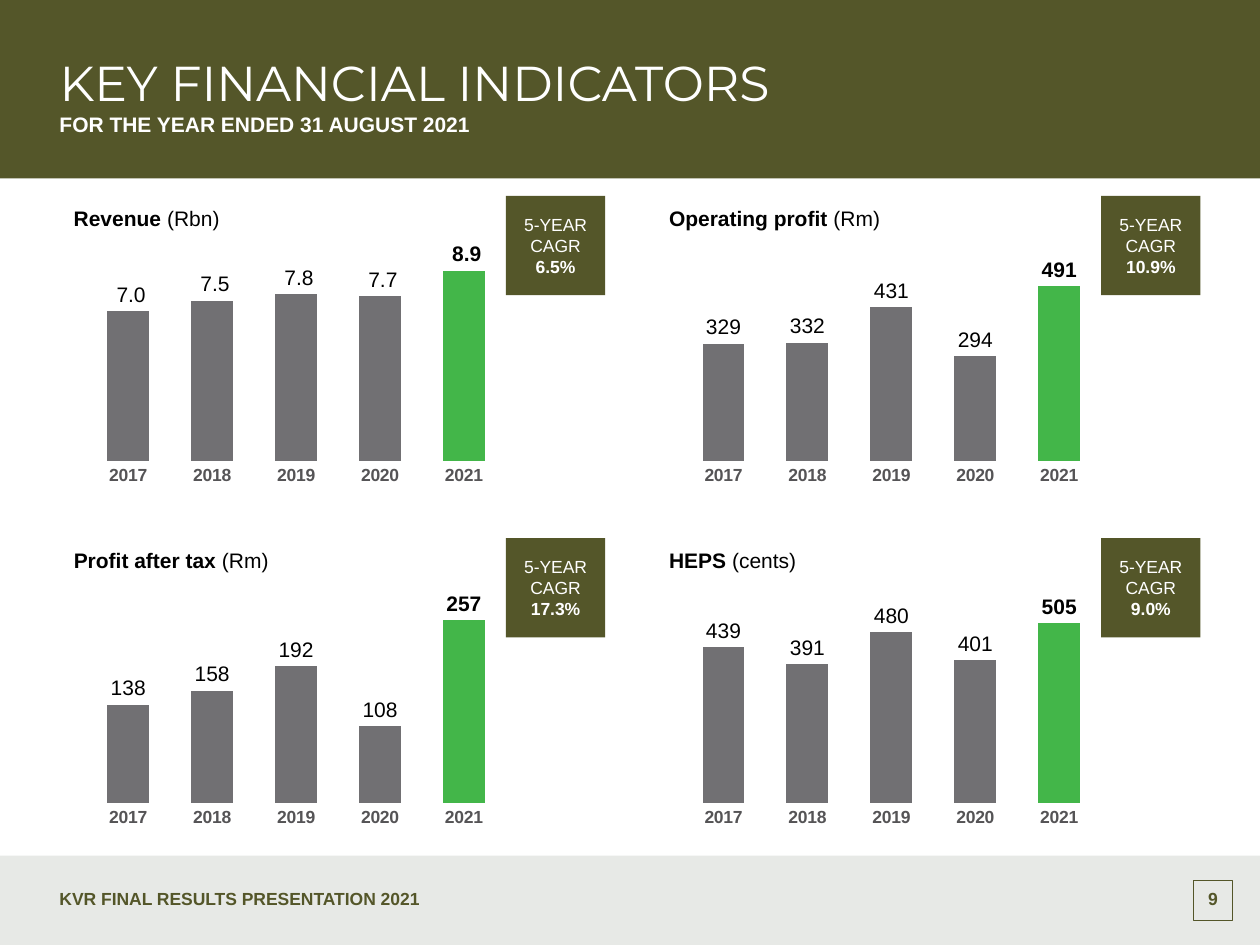
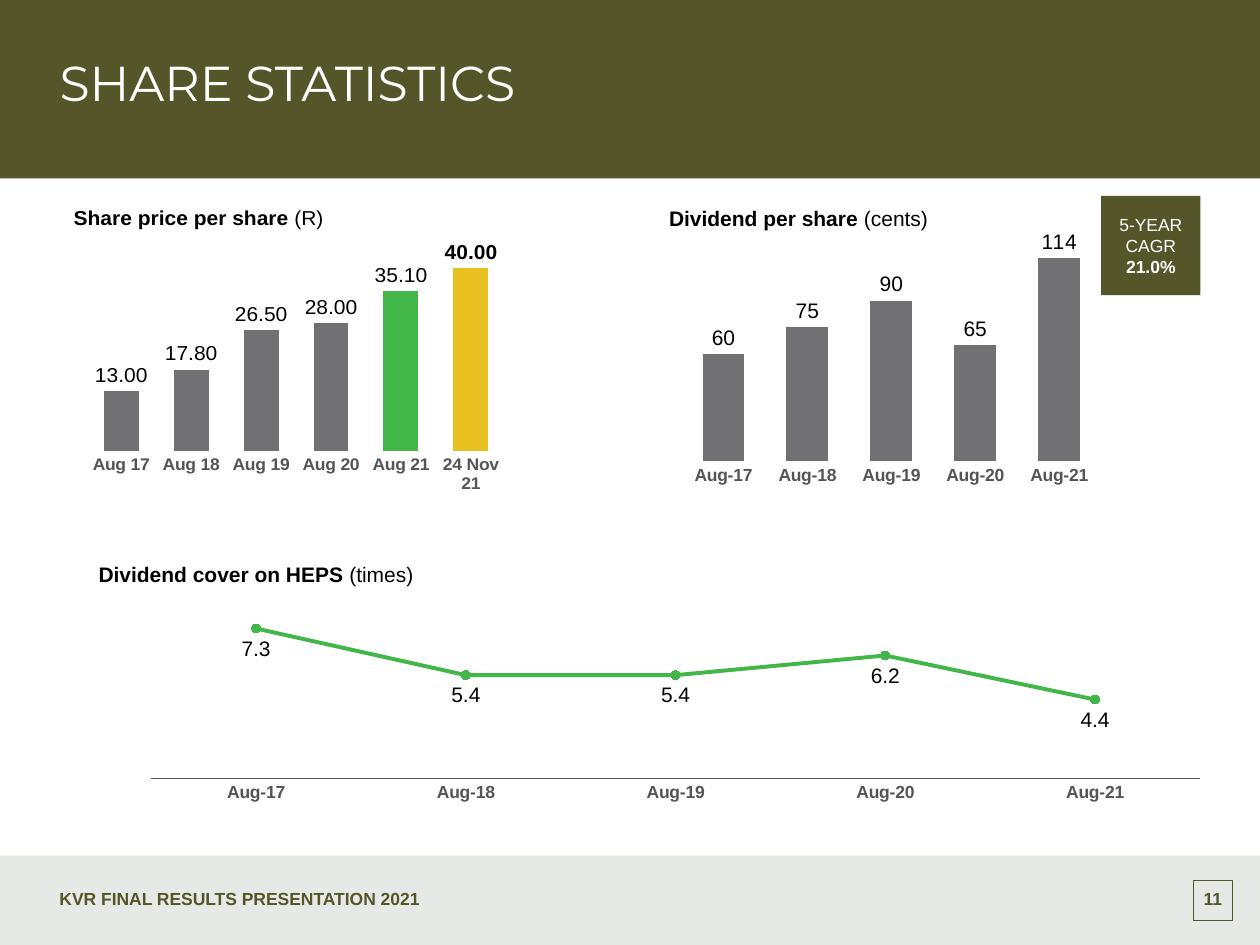
"""Build two slides of financial charts with a shared band, title and footer."""
from dataclasses import dataclass, field

from pptx import Presentation
from pptx.chart.chart import Chart
from pptx.chart.data import CategoryChartData
from pptx.dml.color import RGBColor
from pptx.enum.chart import XL_CHART_TYPE as ChartType
from pptx.enum.chart import XL_LABEL_POSITION as LabelPosition
from pptx.enum.chart import XL_MARKER_STYLE as MarkerStyle
from pptx.enum.chart import XL_TICK_MARK as TickMark
from pptx.enum.shapes import MSO_SHAPE as Preset
from pptx.enum.text import MSO_ANCHOR as Anchor
from pptx.enum.text import MSO_AUTO_SIZE as AutoSize
from pptx.enum.text import PP_ALIGN as Align
from pptx.oxml import parse_xml
from pptx.oxml.ns import nsdecls, qn
from pptx.util import Cm, Pt

COLOURS = {
    "olive": "545629",
    "pale": "E7E9E6",
    "white": "FFFFFF",
    "black": "000000",
    "axis": "555456",
    "grey": "717073",
    "green": "43B649",
    "gold": "E8C01F",
}
BODY_FONT = "Arial"
TITLE_FONT = "Montserrat"
FOOTER = "KVR FINAL RESULTS PRESENTATION 2021"
MARGIN = 1.2
TEXT_WIDTH = 23.0
COLUMN_STEP = 12.0
ROW_STEP = 6.9
CHARTS_TOP = 3.95
CHART_WIDTH = 9.0
CHART_HEIGHT = 6.0
BADGE_SIZE = 2.0
YEARS = ["2017", "2018", "2019", "2020", "2021"]
MONTHS = ["Aug-17", "Aug-18", "Aug-19", "Aug-20", "Aug-21"]


@dataclass
class Area:
    left: float
    top: float
    width: float
    height: float

    def lengths(self) -> list:
        return [Cm(side) for side in (self.left, self.top, self.width, self.height)]


@dataclass
class Indicator:
    name: str
    unit: str
    categories: list[str]
    values: list[float]
    maximum: float
    step: float
    column: int = 0
    row: int = 0
    number_format: str = "#,##0"
    growth: str = ""
    highlights: dict[int, str] = field(default_factory=lambda: {4: "green"})
    bold_label: int | None = 4


def colour(name: str) -> RGBColor:
    return RGBColor.from_string(COLOURS[name])


def style_font(font, size: float, tint: str, bold: bool = False, face: str = BODY_FONT) -> None:
    font.name, font.size, font.bold = face, Pt(size), bold
    font.color.rgb = colour(tint)


def add_span(para, text: str, size: float, tint: str, bold: bool = False, face: str = BODY_FONT) -> None:
    span = para.add_run()
    span.text = text
    style_font(span.font, size, tint, bold, face)


def prepare_frame(frame, anchor, margins: tuple[float, float] = (0, 0)):
    """Set wrapping, anchor and margins, and return the first paragraph."""
    frame.word_wrap = True
    frame.auto_size = AutoSize.NONE
    frame.vertical_anchor = anchor
    frame.margin_left = frame.margin_right = Cm(margins[0])
    frame.margin_top = frame.margin_bottom = Cm(margins[1])
    return frame.paragraphs[0]


def add_box(page, area: Area, fill: str = "", line: str = ""):
    box = page.shapes.add_shape(Preset.RECTANGLE, *area.lengths())
    box.shadow.inherit = False
    if fill:
        box.fill.solid()
        box.fill.fore_color.rgb = colour(fill)
    else:
        box.fill.background()
    if line:
        box.line.color.rgb = colour(line)
        box.line.width = Pt(0.5)
    else:
        box.line.fill.background()
    return box


def add_text(page, area: Area, text: str, size: float, tint: str, anchor) -> None:
    box = page.shapes.add_textbox(*area.lengths())
    para = prepare_frame(box.text_frame, anchor)
    para.line_spacing = 0.9
    add_span(para, text, size, tint, bold=True)


def add_page(deck, title: str, number: str, subtitle: str = ""):
    """Add a title-only slide with the shared bands, title and footer."""
    page = deck.slides.add_slide(deck.slide_layouts[5])
    add_box(page, Area(0, 17.25, 25.4, 1.8), "pale")
    add_box(page, Area(0, 0, 25.4, 3.6), "olive")

    heading = page.shapes.title
    page.shapes.element.append(heading.element)
    heading.left, heading.top, heading.width, heading.height = Area(MARGIN, 1.2, TEXT_WIDTH, 1.1).lengths()
    para = prepare_frame(heading.text_frame, Anchor.TOP)
    para.alignment, para.line_spacing = Align.LEFT, 0.9
    add_span(para, title, 28, "white", face=TITLE_FONT)
    if subtitle:
        add_text(page, Area(MARGIN, 2.3, TEXT_WIDTH, 0.6), subtitle, 12, "white", Anchor.TOP)

    add_text(page, Area(MARGIN, 17.75, 22.5, 0.8), FOOTER, 10, "olive", Anchor.MIDDLE)
    number_box = add_box(page, Area(24.05, 17.75, 0.8, 0.8), line="olive")
    para = prepare_frame(number_box.text_frame, Anchor.MIDDLE)
    para.alignment, para.line_spacing = Align.CENTER, 0.9
    add_span(para, number, 10, "olive", bold=True)
    return page


def place(parent, index: int, target: str = "", **sides: float) -> None:
    """Give a chart title or plot area a manual layout in chart fractions."""
    for old in parent.findall(qn("c:layout")):
        parent.remove(old)
    inner = f'<c:layoutTarget val="{target}"/>' if target else ""
    modes = "".join(f'<c:{side}Mode val="edge"/>' for side in "xy")
    values = "".join(f'<c:{side} val="{value}"/>' for side, value in sides.items())
    parent.insert(index, parse_xml(
        f'<c:layout {nsdecls("c")}><c:manualLayout>{inner}{modes}{values}</c:manualLayout></c:layout>'))


def add_chart(page, item: Indicator, kind, area: Area, label_position) -> Chart:
    """Add a one-series chart with its title, axes and value labels."""
    data = CategoryChartData(number_format=item.number_format)
    data.categories = item.categories
    data.add_series("Series 1", item.values)
    chart = page.shapes.add_chart(kind, *area.lengths(), data).chart
    style_font(chart.font, 10, "olive")
    chart.has_legend = False

    chart.has_title = True
    para = chart.chart_title.text_frame.paragraphs[0]
    add_span(para, item.name, 12, "black", bold=True)
    add_span(para, f" ({item.unit})", 12, "black")
    place(chart.chart_title.element, 1, x=0.21 / area.width, y=0.02)

    values = chart.value_axis
    values.minimum_scale, values.maximum_scale, values.major_unit = 0, item.maximum, item.step
    values.has_major_gridlines = False
    values.visible = False
    categories = chart.category_axis
    categories.major_tick_mark = categories.minor_tick_mark = TickMark.NONE
    style_font(categories.tick_labels.font, 10, "axis", bold=True)
    categories.format.line.fill.background()

    plot = chart.plots[0]
    plot.vary_by_categories = False
    plot.has_data_labels = True
    labels = plot.data_labels
    labels.show_value = True
    labels.position = label_position
    labels.number_format, labels.number_format_is_linked = item.number_format, False
    style_font(labels.font, 12, "black")
    return chart


def plot_area(chart: Chart):
    return chart.element.find(".//" + qn("c:plotArea"))


def add_columns(page, item: Indicator) -> None:
    """Add a column chart in its grid cell, and its growth badge if any."""
    left = MARGIN + item.column * COLUMN_STEP
    top = CHARTS_TOP + item.row * ROW_STEP
    area = Area(left, top, CHART_WIDTH, CHART_HEIGHT)
    chart = add_chart(page, item, ChartType.COLUMN_CLUSTERED, area, LabelPosition.OUTSIDE_END)
    place(plot_area(chart), 0, "inner", x=0.06, y=0.173, w=0.94, h=0.717)
    chart.plots[0].gap_width = 100
    series = chart.plots[0].series[0]
    series.format.fill.solid()
    series.format.fill.fore_color.rgb = colour("grey")
    for index, tint in item.highlights.items():
        fill = series.points[index].format.fill
        fill.solid()
        fill.fore_color.rgb = colour(tint)
    if item.bold_label is not None:
        bold_label = series.points[item.bold_label].data_label
        style_font(bold_label.font, 12, "black", bold=True)
        bold_label.position = LabelPosition.OUTSIDE_END
        labels = series.data_labels
        labels.show_value = True
        labels.position = LabelPosition.OUTSIDE_END
        labels.number_format, labels.number_format_is_linked = item.number_format, False
        style_font(labels.font, 12, "black")
    if item.growth:
        badge = add_box(page, Area(left + CHART_WIDTH, top, BADGE_SIZE, BADGE_SIZE), "olive")
        para = prepare_frame(badge.text_frame, Anchor.MIDDLE, (0.2, 0.1))
        para.alignment = Align.CENTER
        add_span(para, "5-YEAR CAGR ", 10, "white")
        add_span(para, item.growth, 10, "white", bold=True)


def add_cover_line(page, item: Indicator) -> None:
    """Add the wide line chart with round markers."""
    area = Area(1.7, 11.15, 22.5, 5.2)
    chart = add_chart(page, item, ChartType.LINE_MARKERS, area, LabelPosition.BELOW)
    place(plot_area(chart), 0, "inner", x=0.06, y=0.207, w=0.94, h=0.666)
    chart.value_axis.minimum_scale = 1.2
    axis_line = chart.category_axis.format.line
    axis_line.color.rgb = colour("axis")
    axis_line.width = Pt(0.5)
    series = chart.plots[0].series[0]
    series.smooth = False
    series.format.line.color.rgb = colour("green")
    series.format.line.width = Pt(2.25)
    marker = series.marker
    marker.style, marker.size = MarkerStyle.CIRCLE, 5
    marker.format.fill.solid()
    marker.format.fill.fore_color.rgb = colour("green")
    marker.format.line.color.rgb = colour("green")


KEY_INDICATORS = [
    Indicator("Revenue", "Rbn", YEARS, [7.0, 7.5, 7.8, 7.7, 8.9], 10, 1,
              number_format="#\\ ##0.0", growth="6.5%"),
    Indicator("Operating profit", "Rm", YEARS, [329, 332, 431, 294, 491], 600, 100,
              column=1, growth="10.9%"),
    Indicator("Profit after tax", "Rm", YEARS, [138, 158, 192, 108, 257], 300, 50,
              row=1, growth="17.3%"),
    Indicator("HEPS", "cents", YEARS, [439, 391, 480, 401, 505], 600, 100,
              column=1, row=1, growth="9.0%"),
]
SHARE_COLUMNS = [
    Indicator("Share price per share", "R",
              ["Aug 17", "Aug 18", "Aug 19", "Aug 20", "Aug 21", "24 Nov 21"],
              [13, 17.8, 26.5, 28, 35.1, 40], 45, 5, number_format="#,##0.00",
              highlights={4: "green", 5: "gold"}, bold_label=5),
    Indicator("Dividend per share", "cents", MONTHS, [60, 75, 90, 65, 114], 120, 20,
              column=1, growth="21.0%", highlights={}, bold_label=None),
]
DIVIDEND_COVER = Indicator("Dividend cover on HEPS", "times", MONTHS,
                           [7.3, 5.4, 5.4, 6.2, 4.4], 8.2, 1, number_format="0.0")


def main() -> None:
    deck = Presentation()
    deck.slide_width, deck.slide_height = Cm(25.4), Cm(19.05)
    page = add_page(deck, "KEY FINANCIAL INDICATORS", "9", "FOR THE YEAR ENDED 31 AUGUST 2021")
    for item in KEY_INDICATORS:
        add_columns(page, item)
    page = add_page(deck, "SHARE STATISTICS", "11")
    for item in SHARE_COLUMNS:
        add_columns(page, item)
    add_cover_line(page, DIVIDEND_COVER)
    deck.save("out.pptx")


if __name__ == "__main__":
    main()
